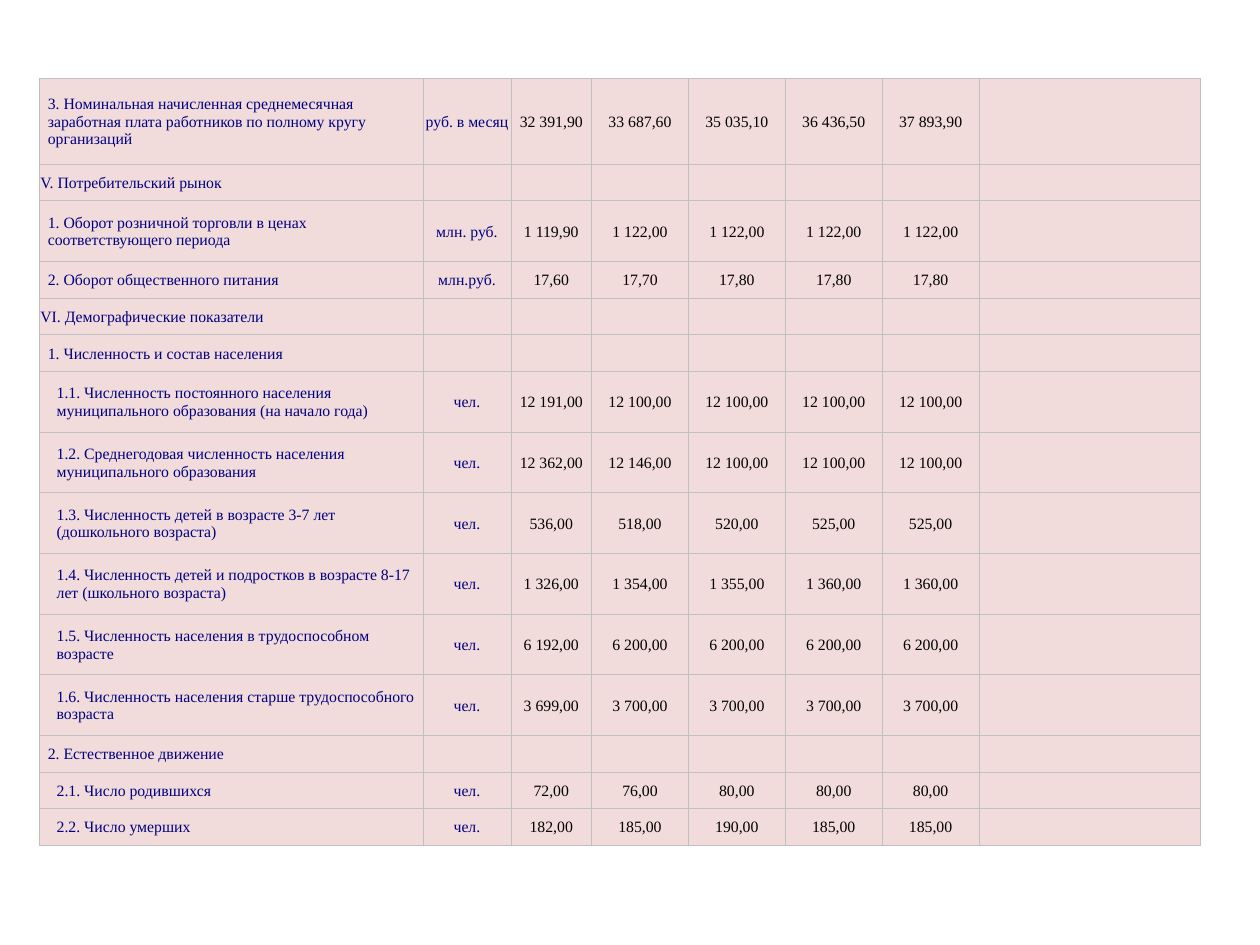
from lxml.etree import SubElement
from pptx import Presentation
from pptx.dml.color import RGBColor as RGB
from pptx.enum.text import MSO_ANCHOR as Anchor, PP_ALIGN as Align
from pptx.oxml.ns import qn
from pptx.util import Inches, Pt

NAVY = RGB(0x00, 0x00, 0x80)
BLACK = RGB(0x00, 0x00, 0x00)
PINK = RGB(0xF2, 0xDC, 0xDB)
SILVER = RGB(0xC0, 0xC0, 0xC0)

GRID_COLS, GRID_ROWS = 100, 75
COL_WEIGHTS = [3.05, 0.7, 0.64, 0.77, 0.77, 0.77, 0.77, 1.76]
LINE_WEIGHTS = {1: 0.29, 2: 0.48, 3: 0.68}
INDENTS = [0.01, 0.07, 0.14]

# level, lines, label, unit, values
INDICATORS = [
    (1, 3, "3. Номинальная начисленная среднемесячная заработная плата работников по полному кругу организаций",
     "руб. в месяц", "32 391,90|33 687,60|35 035,10|36 436,50|37 893,90"),
    (0, 1, "V. Потребительский рынок", "", ""),
    (1, 2, "1. Оборот розничной торговли в ценах соответствующего периода",
     "млн. руб.", "1 119,90|1 122,00|1 122,00|1 122,00|1 122,00"),
    (1, 1, "2. Оборот общественного питания", "млн.руб.", "17,60|17,70|17,80|17,80|17,80"),
    (0, 1, "VI. Демографические показатели", "", ""),
    (1, 1, "1. Численность и состав населения", "", ""),
    (2, 2, "1.1. Численность постоянного населения муниципального образования (на начало года)",
     "чел.", "12 191,00|12 100,00|12 100,00|12 100,00|12 100,00"),
    (2, 2, "1.2. Среднегодовая численность населения муниципального образования",
     "чел.", "12 362,00|12 146,00|12 100,00|12 100,00|12 100,00"),
    (2, 2, "1.3. Численность детей в возрасте 3-7 лет (дошкольного возраста)",
     "чел.", "536,00|518,00|520,00|525,00|525,00"),
    (2, 2, "1.4. Численность детей и подростков в возрасте 8-17 лет (школьного возраста)",
     "чел.", "1 326,00|1 354,00|1 355,00|1 360,00|1 360,00"),
    (2, 2, "1.5. Численность населения в трудоспособном возрасте",
     "чел.", "6 192,00|6 200,00|6 200,00|6 200,00|6 200,00"),
    (2, 2, "1.6. Численность населения старше трудоспособного возраста",
     "чел.", "3 699,00|3 700,00|3 700,00|3 700,00|3 700,00"),
    (1, 1, "2. Естественное движение", "", ""),
    (2, 1, "2.1. Число родившихся", "чел.", "72,00|76,00|80,00|80,00|80,00"),
    (2, 1, "2.2. Число умерших", "чел.", "182,00|185,00|190,00|185,00|185,00"),
]


def write(tf, text, font="Times New Roman", size=9, color=BLACK, align=Align.LEFT):
    p = tf.paragraphs[0]
    p.alignment = align
    if not text:
        SubElement(p._p, qn("a:endParaRPr"), sz=str(size * 100))
        return
    r = p.add_run()
    r.text = text
    r.font.name, r.font.size = font, Pt(size)
    r.font.color.rgb = color


def share(total, weights):
    return [int(total * w / sum(weights)) for w in weights]


class Deck:
    def __init__(self, width=10, height=7.5, fill=PINK, line=SILVER, line_width=0.5):
        self.prs = Presentation()
        self.prs.slide_width, self.prs.slide_height = Inches(width), Inches(height)
        self.fill, self.line, self.line_width = fill, line, Pt(line_width)
        self.s = self.prs.slides.add_slide(self.prs.slide_layouts[6])

    def x(self, cols):
        return int(self.prs.slide_width * cols / GRID_COLS)

    def y(self, rows):
        return int(self.prs.slide_height * rows / GRID_ROWS)

    def cell(self, cell, text, indent=INDENTS[0], **fmt):
        cell.margin_left = Inches(indent)
        cell.margin_right = cell.margin_top = Inches(0.01)
        cell.margin_bottom = 0
        cell.vertical_anchor = Anchor.MIDDLE
        tc_pr = cell._tc.get_or_add_tcPr()
        for side in ("lnL", "lnR", "lnT", "lnB"):
            ln = SubElement(tc_pr, qn(f"a:{side}"), w=str(self.line_width))
            SubElement(SubElement(ln, qn("a:solidFill")), qn("a:srgbClr"), val=str(self.line))
        cell.fill.solid()
        cell.fill.fore_color.rgb = self.fill
        write(cell.text_frame, text, **fmt)

    def table(self, indicators, left, top, width, height):
        w, h = self.x(width), self.y(height)
        shape = self.s.shapes.add_table(len(indicators), len(COL_WEIGHTS),
                                        self.x(left), self.y(top), w, h)
        table = shape.table
        table.first_row = table.horz_banding = False
        for col, col_width in zip(table.columns, share(w, COL_WEIGHTS)):
            col.width = col_width
        heights = share(h, [LINE_WEIGHTS[item[1]] for item in indicators])
        for row, row_height, (level, _, label, unit, values) in zip(table.rows, heights, indicators):
            row.height = row_height
            label_cell, unit_cell, *value_cells = row.cells
            self.cell(label_cell, label, INDENTS[level], color=NAVY)
            self.cell(unit_cell, unit, color=NAVY, align=Align.CENTER)
            texts = values.split("|")
            texts += [""] * (len(value_cells) - len(texts))
            for value_cell, text in zip(value_cells, texts):
                self.cell(value_cell, text, align=Align.CENTER)


def main():
    deck = Deck()
    deck.table(INDICATORS, left=3.1, top=6.2, width=92.2, height=60.9)
    deck.prs.save("out.pptx")


if __name__ == "__main__":
    main()
